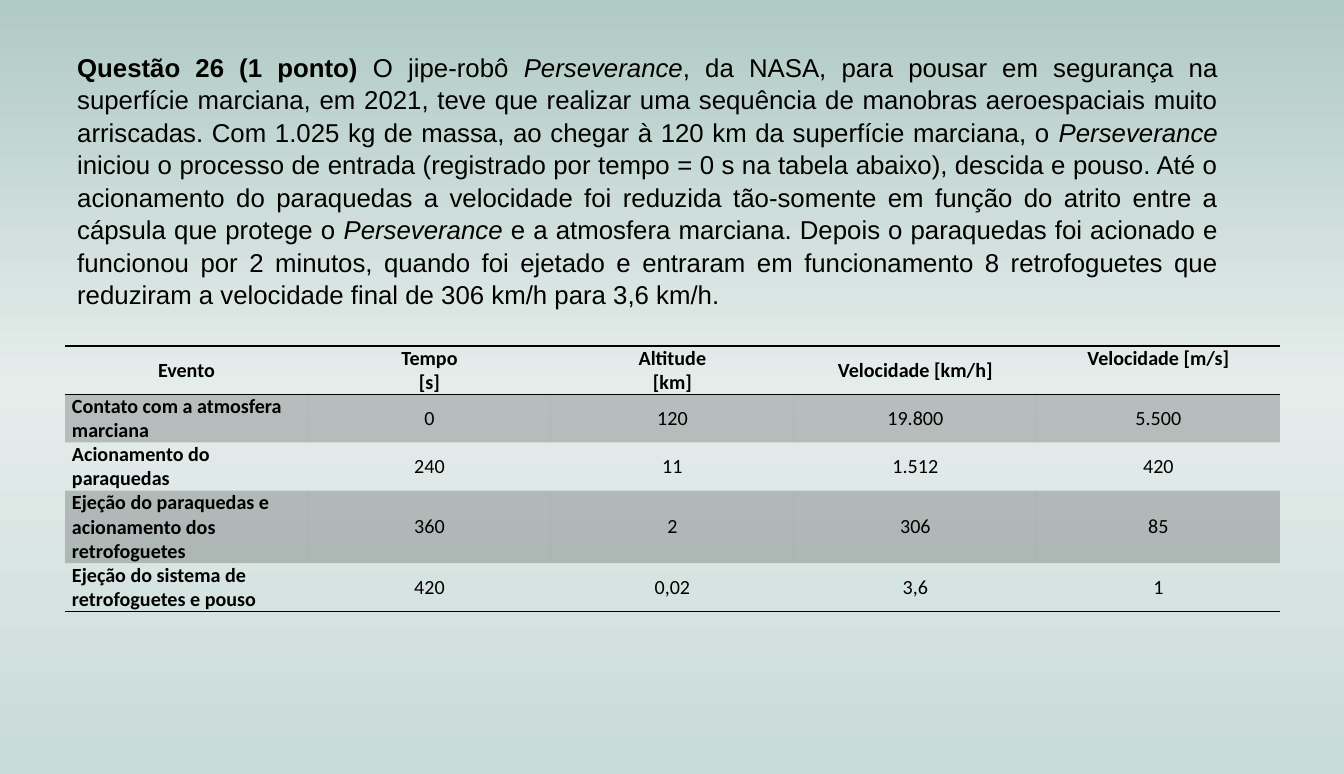
"""Build the slide for question 26: the Mars landing text and its table of events."""
from copy import deepcopy
from dataclasses import dataclass

from pptx import Presentation
from pptx.dml.color import RGBColor
from pptx.enum.text import MSO_ANCHOR, PP_ALIGN
from pptx.oxml.ns import qn
from pptx.oxml.xmlchemy import OxmlElement
from pptx.util import Emu, Pt

STATEMENT = [
    ("Questão 26 (1 ponto) ", "bold"),
    ("O jipe-robô ", ""),
    ("Perseverance", "italic"),
    (", da NASA, para pousar em segurança na superfície marciana, em 2021, teve que "
     "realizar uma sequência de manobras aeroespaciais muito arriscadas. Com 1.025 kg de "
     "massa, ao chegar à 120 km da superfície marciana, o ", ""),
    ("Perseverance", "italic"),
    (" iniciou o processo de entrada (registrado por tempo = 0 s na tabela abaixo), descida "
     "e pouso. Até o acionamento do paraquedas a velocidade foi reduzida tão-somente em "
     "função do atrito entre a cápsula que protege o ", ""),
    ("Perseverance", "italic"),
    (" e a atmosfera marciana. Depois o paraquedas foi acionado e funcionou por 2 minutos, "
     "quando foi ejetado e entraram em funcionamento 8 retrofoguetes que reduziram a "
     "velocidade final de 306 km/h para 3,6 km/h.", ""),
]
EVENTS = [
    ("Evento", "Tempo\n[s]", "Altitude\n[km]", "Velocidade [km/h]", "Velocidade [m/s]"),
    ("Contato com a atmosfera marciana", "0", "120", "19.800", "5.500"),
    ("Acionamento do paraquedas", "240", "11", "1.512", "420"),
    ("Ejeção do paraquedas e acionamento dos retrofoguetes", "360", "2", "306", "85"),
    ("Ejeção do sistema de retrofoguetes e pouso", "420", "0,02", "3,6", "1"),
]
TOP_ANCHORED = {(0, 1), (0, 4)}

SLIDE_SIZE = (1344, 774)
STATEMENT_BOX = (67, 45, 1161, 260)
TABLE_LEFT, TABLE_TOP = 65, 346
COLUMN_WIDTH = 243
ROW_HEIGHTS = [48, 48, 48, 72, 48]
CELL_MARGIN = 7


@dataclass(frozen=True)
class Theme:
    """Colours, fonts and sizes of the slide."""
    ink: RGBColor = RGBColor(0, 0, 0)
    background: tuple = ((0, "B0CAC4"), (0.5, "E5EDEB"), (0.98, "CADCD8"))
    band_alpha: int = 20000
    statement_font: str = "Arial"
    statement_size: int = 18
    table_font: str = "Calibri"
    table_size: int = 14
    rule_width: int = 1
    plain_table_style: str = "{2D5ABB26-0587-4C30-8999-92F81FD0307C}"


THEME = Theme()


def px(length):
    return Emu(round(length * 914400 / 103.2))


def set_font(font, name, size):
    font.name = name
    font.size = Pt(size)
    font.color.rgb = THEME.ink


def paint_background(slide):
    fill = slide.background.fill
    fill.gradient()
    fill.gradient_angle = 270
    stop_list = slide.element.find(".//" + qn("a:gsLst"))
    stop_list.append(deepcopy(stop_list[0]))
    for stop, (position, color) in zip(fill.gradient_stops, THEME.background):
        stop.position = position
        stop.color.rgb = RGBColor.from_string(color)


def add_statement(slide):
    frame = slide.shapes.add_textbox(*map(px, STATEMENT_BOX)).text_frame
    frame.word_wrap = True
    paragraph = frame.paragraphs[0]
    paragraph.alignment = PP_ALIGN.JUSTIFY
    paragraph.line_spacing = 1.05
    paragraph.space_after = Pt(6)
    set_font(paragraph.font, THEME.statement_font, THEME.statement_size)
    for text, style in STATEMENT:
        run = paragraph.add_run()
        run.text = text
        set_font(run.font, THEME.statement_font, THEME.statement_size)
        run.font.bold = style == "bold"
        run.font.italic = style == "italic"


def add_rule(cell, side):
    line = OxmlElement(f"a:{side}")
    line.set("w", str(Pt(THEME.rule_width)))
    color = OxmlElement("a:srgbClr")
    color.set("val", str(THEME.ink))
    fill = OxmlElement("a:solidFill")
    fill.append(color)
    line.append(fill)
    cell._tc.get_or_add_tcPr().append(line)


def fill_band(cell):
    cell.fill.solid()
    cell.fill.fore_color.rgb = THEME.ink
    alpha = OxmlElement("a:alpha")
    alpha.set("val", str(THEME.band_alpha))
    cell._tc.tcPr.find(".//" + qn("a:srgbClr")).append(alpha)


def format_cell(cell, row, column):
    cell.text = EVENTS[row][column]
    cell.margin_left = cell.margin_right = px(CELL_MARGIN)
    cell.margin_top = cell.margin_bottom = 0
    top = (row, column) in TOP_ANCHORED
    cell.vertical_anchor = MSO_ANCHOR.TOP if top else MSO_ANCHOR.MIDDLE
    for paragraph in cell.text_frame.paragraphs:
        label = row > 0 and column == 0
        paragraph.alignment = PP_ALIGN.LEFT if label else PP_ALIGN.CENTER
        set_font(paragraph.font, THEME.table_font, THEME.table_size)
        paragraph.font.bold = row == 0 or column == 0
    if row == 0:
        add_rule(cell, "lnT")
    if row in (0, len(EVENTS) - 1):
        add_rule(cell, "lnB")
    if row % 2:
        fill_band(cell)
    else:
        cell.fill.background()


def add_events_table(slide):
    row_count, column_count = len(EVENTS), len(EVENTS[0])
    size = (COLUMN_WIDTH * column_count, sum(ROW_HEIGHTS))
    frame = slide.shapes.add_table(
        row_count, column_count, *map(px, (TABLE_LEFT, TABLE_TOP, *size)))
    table = frame.table
    table.first_row = table.horz_banding = False
    table._tbl.tblPr.find(qn("a:tableStyleId")).text = THEME.plain_table_style
    for column in table.columns:
        column.width = px(COLUMN_WIDTH)
    for row, height in enumerate(ROW_HEIGHTS):
        table.rows[row].height = px(height)
        for column in range(column_count):
            format_cell(table.cell(row, column), row, column)


def main():
    presentation = Presentation()
    presentation.slide_width, presentation.slide_height = map(px, SLIDE_SIZE)
    slide = presentation.slides.add_slide(presentation.slide_layouts[6])
    paint_background(slide)
    add_statement(slide)
    add_events_table(slide)
    presentation.save("out.pptx")


if __name__ == "__main__":
    main()
